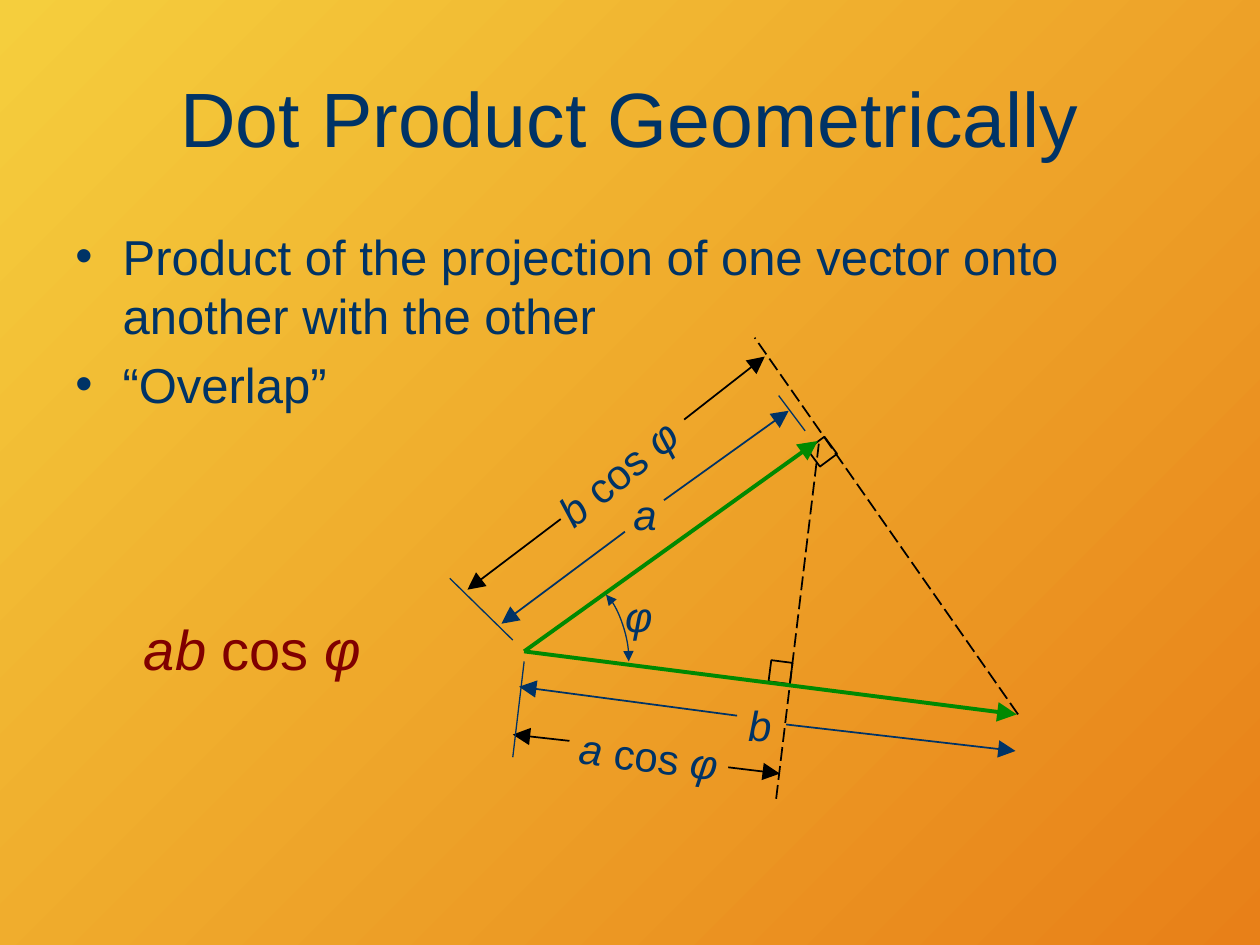
from lxml.etree import SubElement as Sub
from pptx import Presentation
from pptx.dml.color import RGBColor as RGB
from pptx.enum.dml import MSO_LINE as Dash
from pptx.enum.shapes import MSO_CONNECTOR as Conn, MSO_SHAPE as Geo
from pptx.enum.text import MSO_ANCHOR as Anchor, MSO_AUTO_SIZE as Auto, PP_ALIGN as Align
from pptx.oxml.ns import qn
from pptx.util import Inches, Pt

NAVY, BLACK, GREEN, RED = "003366", "000000", "008901", "800000"

deck = Presentation()
deck.slide_width, deck.slide_height = Inches(10), Inches(7.5)
slide = deck.slides.add_slide(deck.slide_layouts[6])
shapes = slide.shapes
U = deck.slide_width // 100  # grid of 100 columns by 75 rows


def text(box, paras, size, color=NAVY, turn=0, before=0, indent=0, bullet=""):
    """Text box; each paragraph is a list of runs, a leading / marks italics."""
    item = shapes.add_textbox(*[round(v * U) for v in box])
    item.rotation = turn
    frame = item.text_frame
    frame.word_wrap = True
    for i, runs in enumerate(paras):
        para = frame.add_paragraph() if i else frame.paragraphs[0]
        para.alignment = Align.LEFT if bullet else Align.CENTER
        props = para._p.get_or_add_pPr()
        if indent:
            props.set("marL", str(round(indent * U)))
            props.set("indent", str(round(-indent * U)))
        if before:
            gap = Sub(props, qn("a:spcBef"))
            Sub(gap, qn("a:spcPct")).set("val", str(before * 1000))
        if bullet:
            Sub(props, qn("a:buFont")).set("typeface", "Arial")
            Sub(props, qn("a:buChar")).set("char", bullet)
        for part in runs:
            run = para.add_run()
            run.text = part.lstrip("/")
            font = run.font
            font.name, font.size = "Arial", Pt(size)
            font.italic = part.startswith("/")
            font.color.rgb = RGB.from_string(color)
    return frame


def style(item, color, width, heads=(), dash=None, size="lg"):
    """Line colour, width, dash and arrowheads, without a shadow."""
    line = item.line
    line.color.rgb = RGB.from_string(color)
    line.width = Pt(width)
    if dash:
        line.dash_style = dash
    for end in heads:
        head = Sub(line._get_or_add_ln(), qn("a:" + end))
        for key, val in (("type", "triangle"), ("w", size), ("len", size)):
            head.set(key, val)
    Sub(item._element.spPr, qn("a:effectLst"))


# Background
fill = slide.background.fill
fill.gradient()
fill.gradient_angle = 315
for stop, color, pos in zip(fill.gradient_stops, ("F5CE3D", "E88018"), (0, 1)):
    stop.color.rgb = RGB.from_string(color)
    stop.position = pos

# Title and bullets
title = text((5, 3, 90, 12.5), [["Dot Product Geometrically"]], 44)
title.vertical_anchor = Anchor.MIDDLE
text((5, 17.5, 89.2, 18.3),
     [["Product of the projection of one vector onto another with the other"],
      ["“Overlap”"]], 28, before=20, indent=3.75, bullet="•")

# Right angle marks
for x, y, turn in ((64.4, 35, 53.5), (61.1, 52.5, 7.3)):
    mark = shapes.add_shape(Geo.RECTANGLE, *[round(v * U) for v in (x, y, 1.7, 1.7)])
    mark.rotation = turn
    mark.fill.background()
    style(mark, BLACK, 1)

# Lines by kind: colour, width, heads, dash, then their ends
arrow = ("tailEnd",)
kinds = [
    # Perpendiculars
    (BLACK, 1, (), Dash.LONG_DASH,
     [(80.8, 56.7, 59.9, 26.8), (61.6, 63.4, 65, 35.1)]),
    # Projection lengths
    (BLACK, 1, arrow, None,
     [(44.5, 41.2, 37.1, 46.8), (54.3, 33.3, 60.7, 28.3),
      (57.8, 60.9, 61.9, 61.4), (45.2, 58.8, 40.7, 58.3)]),
    # Extension lines
    (NAVY, 0.75, (), None,
     [(41.6, 52.5, 40.7, 60.1), (40.7, 50.8, 35.7, 45.9), (63.9, 34.2, 61.8, 31.4)]),
    # Vectors
    (GREEN, 2.25, arrow, None,
     [(41.6, 51.7, 64.9, 35), (41.6, 51.7, 80.7, 56.7)]),
    # Vector lengths
    (NAVY, 1, arrow, None,
     [(62.4, 57.5, 80.6, 59.6), (49.6, 42.2, 39.8, 49.5),
      (58.5, 56.8, 41.2, 54.5), (52.7, 39.7, 62.6, 32.6)]),
]
for color, width, heads, dash, ends in kinds:
    for end in ends:
        line = shapes.add_connector(Conn.STRAIGHT, *[round(v * U) for v in end])
        style(line, color, width, heads, dash)

# Angle arc, sampled along a cubic curve
knots = ((48.1, 47.2), (48.9, 47.8), (50, 50.5), (49.9, 52.5))
steps = 24
curve = []
for i in range(steps + 1):
    t = i / steps
    mix = ((1 - t) ** 3, 3 * t * (1 - t) ** 2, 3 * t * t * (1 - t), t ** 3)
    curve.append([round(U * sum(m * k[axis] for m, k in zip(mix, knots)))
                  for axis in (0, 1)])
trace = shapes.build_freeform(*curve[0])
trace.add_line_segments(curve[1:], close=False)
arc = trace.convert_to_shape()
arc.fill.background()
style(arc, NAVY, 0.75, ("headEnd", "tailEnd"), size="med")

# Labels
for box, runs, turn in (
    ((42.3, 35, 13.4, 5), ["/b ", "cos ", "/φ"], 320.8),
    ((44.2, 57.5, 14.6, 5), ["/a ", "cos ", "/φ"], 7.4),
    ((49.1, 38.3, 4.2, 5), ["/a"], 0),
    ((58.2, 55, 4.2, 5), ["/b"], 0),
    ((48.6, 46.4, 4.2, 5), ["/φ"], 0),
):
    label = text(box, [runs], 24, turn=turn, before=50)
    label.auto_size = Auto.SHAPE_TO_FIT_TEXT

# Formula
text((9.2, 48.3, 21.7, 6.7), [["/ab", " cos ", "/φ"]], 32, RED, before=20, indent=3.75)

deck.save("out.pptx")
